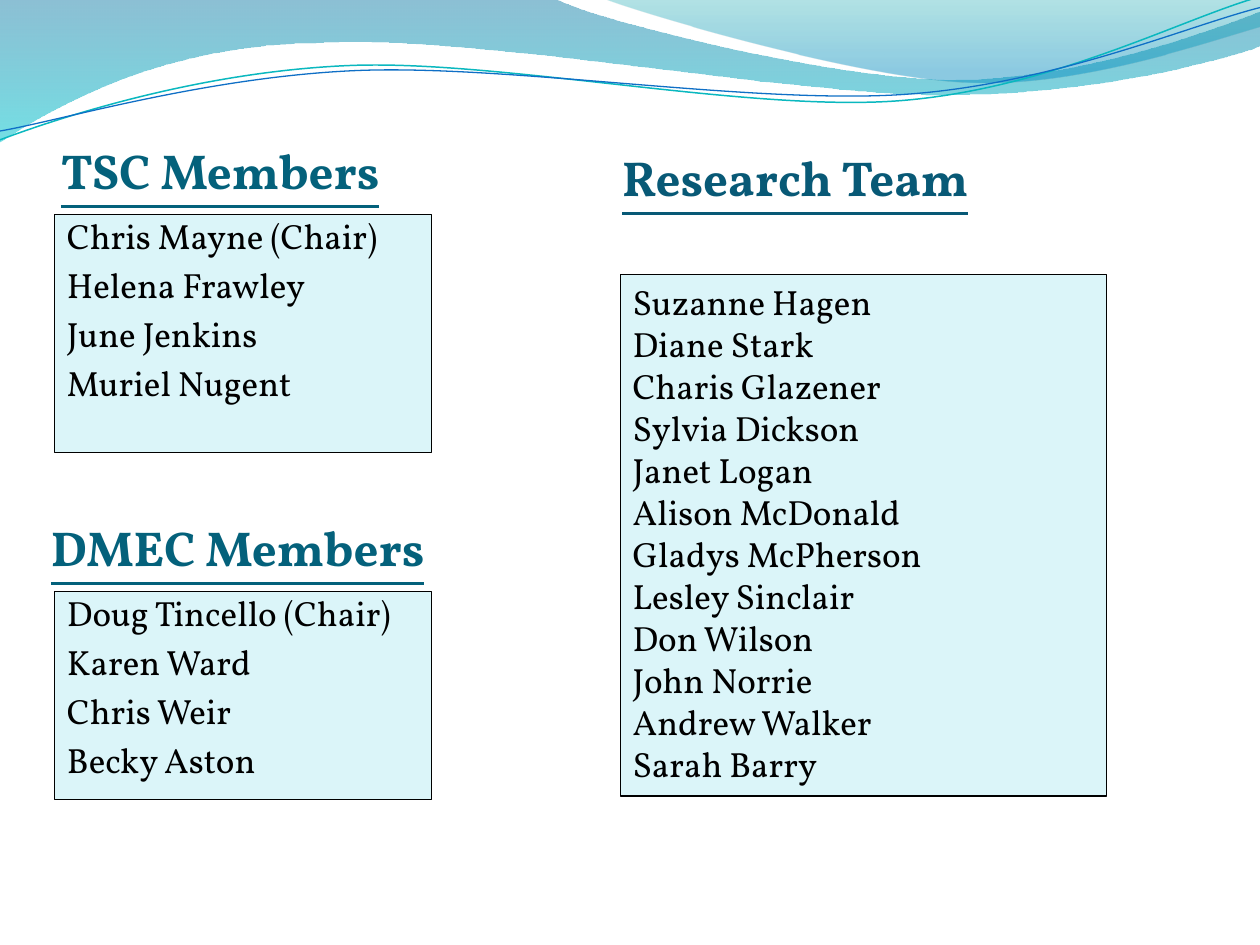
from math import cos, radians, sin

from lxml.etree import SubElement
from pptx import Presentation
from pptx.dml.color import RGBColor
from pptx.enum.shapes import MSO_SHAPE
from pptx.enum.text import MSO_ANCHOR, PP_ALIGN
from pptx.oxml.ns import qn
from pptx.util import Inches, Pt

# Grid of 100 columns by 75 rows of square cells
COLUMNS, ROWS = 100, 75
CELL = Inches(0.1)
TILT = 2.7  # degrees by which the thin curves lean anticlockwise

FONT = "Vollkorn"
BLACK = RGBColor(0x00, 0x00, 0x00)
PANEL = RGBColor(0xDB, 0xF5, 0xF9)
HEADING = RGBColor(0x04, 0x61, 0x7B)
TEAM_HEADING = RGBColor(0x08, 0x59, 0x76)
DEEP_BLUE = RGBColor(0x00, 0x74, 0xA1)
AQUA = RGBColor(0x00, 0xC6, 0xCF)
TEAL = RGBColor(0x00, 0xA1, 0xA9)
SKY = RGBColor(0x00, 0x8B, 0xBF)
TEAL_LINE = RGBColor(0x0A, 0xB8, 0xBF)
BLUE_LINE = RGBColor(0x0F, 0x6F, 0xC6)

TSC = ["Chris Mayne (Chair)", "Helena Frawley", "June Jenkins", "Muriel Nugent"]
DMEC = ["Doug Tincello (Chair)", "Karen Ward", "Chris Weir", "Becky Aston"]
TEAM = ["Suzanne Hagen", "Diane Stark", "Charis Glazener", "Sylvia Dickson",
        "Janet Logan", "Alison McDonald", "Gladys McPherson", "Lesley Sinclair",
        "Don Wilson", "John Norrie", "Andrew Walker", "Sarah Barry"]

# Outlines in grid cells: one point is a straight step, three are a Bezier curve
BROAD_WAVE = [
    [(0, -0.1)], [(44, -0.1)],
    [(47.6, 1.7), (66.4, 6.3), (75.8, 6.3)],
    [(85.3, 6.3), (95.8, 2.6), (100, 0.9)],
    [(100.1, 3.6)],
    [(98.3, 4.4), (87, 7.6), (74.6, 7.5)],
    [(62.2, 7.5), (38.2, 2.8), (25.7, 3.4)],
    [(12.9, 3.5), (4.6, 8.3), (-0.1, 11.3)],
]
RIGHT_WAVE = [
    [(47.9, -0.1)],
    [(50.9, 1.1), (68.2, 6.2), (76.9, 6.5)],
    [(85.6, 6.9), (96.1, 3.2), (100, 2.1)],
    [(100, 0)],
]
TEAL_CURVE = [
    [(0, 11.1)],
    [(4.8, 9.3), (15.8, 5.7), (27.7, 5.2)],
    [(39.5, 4.7), (59.3, 8.9), (71.3, 8)],
    [(83.3, 7.1), (93.8, 1.5), (99.8, -0.2)],
]
BLUE_CURVE = [
    [(0, 10.4)],
    [(4.7, 9.6), (16.4, 6.1), (28.3, 5.6)],
    [(40.3, 5.1), (59.7, 8.3), (71.7, 7.5)],
    [(83.6, 6.7), (94.1, 2.1), (100, 0.6)],
]


def cells(*lengths):
    return [round(length * CELL) for length in lengths]


def add_outline(slide, segments, closed):
    points = [cells(*point) for segment in segments for point in segment]
    builder = slide.shapes.build_freeform(*points[0])
    builder.add_line_segments(points[1:], close=closed)
    outline = builder.convert_to_shape()
    outline.shadow.inherit = False
    # Join each group of three steps into one Bezier curve
    steps = iter(list(outline.element.spPr.iter(qn("a:lnTo"))))
    for segment in segments[1:]:
        first, *others = [next(steps) for _ in segment]
        if others:
            first.tag = qn("a:cubicBezTo")
            for step in others:
                first.append(step[0])
                step.getparent().remove(step)
    return outline


def add_wave(slide, segments, stops):
    """Draw a filled wave; each stop is position, colour and opacity percent."""
    wave = add_outline(slide, segments, closed=True)
    wave.line.fill.background()
    wave.fill.gradient()
    wave.fill.gradient_angle = 270
    for stop, (position, color, _) in zip(wave.fill.gradient_stops, stops):
        stop.position = position
        stop.color.rgb = color
    for rgb, (_, _, opacity) in zip(wave.element.spPr.iter(qn("a:srgbClr")), stops):
        SubElement(rgb, qn("a:alpha")).set("val", str(opacity * 1000))


def level(point, pivot):
    """Turn a point clockwise by the tilt about the pivot."""
    x, y = point[0] - pivot[0], point[1] - pivot[1]
    c, s = cos(radians(TILT)), sin(radians(TILT))
    return pivot[0] + x * c - y * s, pivot[1] + x * s + y * c


def add_curve(slide, segments, pivot, color, width):
    leveled = [[level(point, pivot) for point in segment] for segment in segments]
    curve = add_outline(slide, leveled, closed=False)
    curve.rotation = 360 - TILT
    curve.fill.background()
    curve.line.color.rgb = color
    curve.line.width = Pt(width)


def write(holder, lines, size=20, color=BLACK, bold=False, underline=False,
          anchor=MSO_ANCHOR.TOP, side=0.1, top=0.0, bottom=0.0, gap=0):
    frame = holder.text_frame
    frame.word_wrap = True
    frame.vertical_anchor = anchor
    frame.margin_left = frame.margin_right = Inches(side)
    frame.margin_top, frame.margin_bottom = Inches(top), Inches(bottom)
    for number, line in enumerate(lines):
        paragraph = frame.paragraphs[0] if number == 0 else frame.add_paragraph()
        paragraph.alignment = PP_ALIGN.LEFT
        paragraph.space_before = Pt(gap if number else 0)
        run = paragraph.add_run()
        run.text = line
        run.font.name, run.font.size = FONT, Pt(size)
        run.font.bold, run.font.underline = bold, underline
        run.font.color.rgb = color


def add_heading(slide, title, box, color=HEADING, **text_format):
    heading = slide.shapes.add_textbox(*cells(*box))
    write(heading, [title], size=28, color=color, bold=True, underline=True, **text_format)


def add_members(slide, names, box, **text_format):
    panel = slide.shapes.add_shape(MSO_SHAPE.RECTANGLE, *cells(*box))
    panel.shadow.inherit = False
    panel.fill.solid()
    panel.fill.fore_color.rgb = PANEL
    panel.line.color.rgb = BLACK
    panel.line.width = Pt(0.75)
    write(panel, names, bottom=0.05, **text_format)


def main():
    deck = Presentation()
    deck.slide_width, deck.slide_height = cells(COLUMNS, ROWS)
    slide = deck.slides.add_slide(deck.slide_layouts[6])

    # Waves along the top edge
    add_wave(slide, BROAD_WAVE, [(0, DEEP_BLUE, 45), (1, AQUA, 55)])
    add_wave(slide, RIGHT_WAVE, [(0, TEAL, 30), (0.8, SKY, 45)])
    add_curve(slide, TEAL_CURVE, (49.9, 5.75), TEAL_LINE, 0.85)
    add_curve(slide, BLUE_CURVE, (49.95, 5.9), BLUE_LINE, 0.75)

    # Committees on the left
    committee_heading = {"anchor": MSO_ANCHOR.MIDDLE, "side": 0.05}
    add_heading(slide, "TSC Members", (4.33, 10.7, 28.4, 5.5), **committee_heading)
    add_heading(slide, "DMEC Members", (3.53, 39.85, 33.9, 7.1), **committee_heading)
    add_members(slide, TSC, (4.33, 17, 29.9, 18.9), gap=4)
    add_members(slide, DMEC, (4.33, 46.94, 29.9, 16.54), gap=4)

    # Research team on the right
    add_heading(slide, "Research Team", (48.4, 11.2, 45.7, 5.7), color=TEAM_HEADING,
                top=0.05, bottom=0.05)
    add_members(slide, TEAM, (49.23, 21.77, 38.6, 41.4), top=0.05)

    deck.save("out.pptx")


if __name__ == "__main__":
    main()
